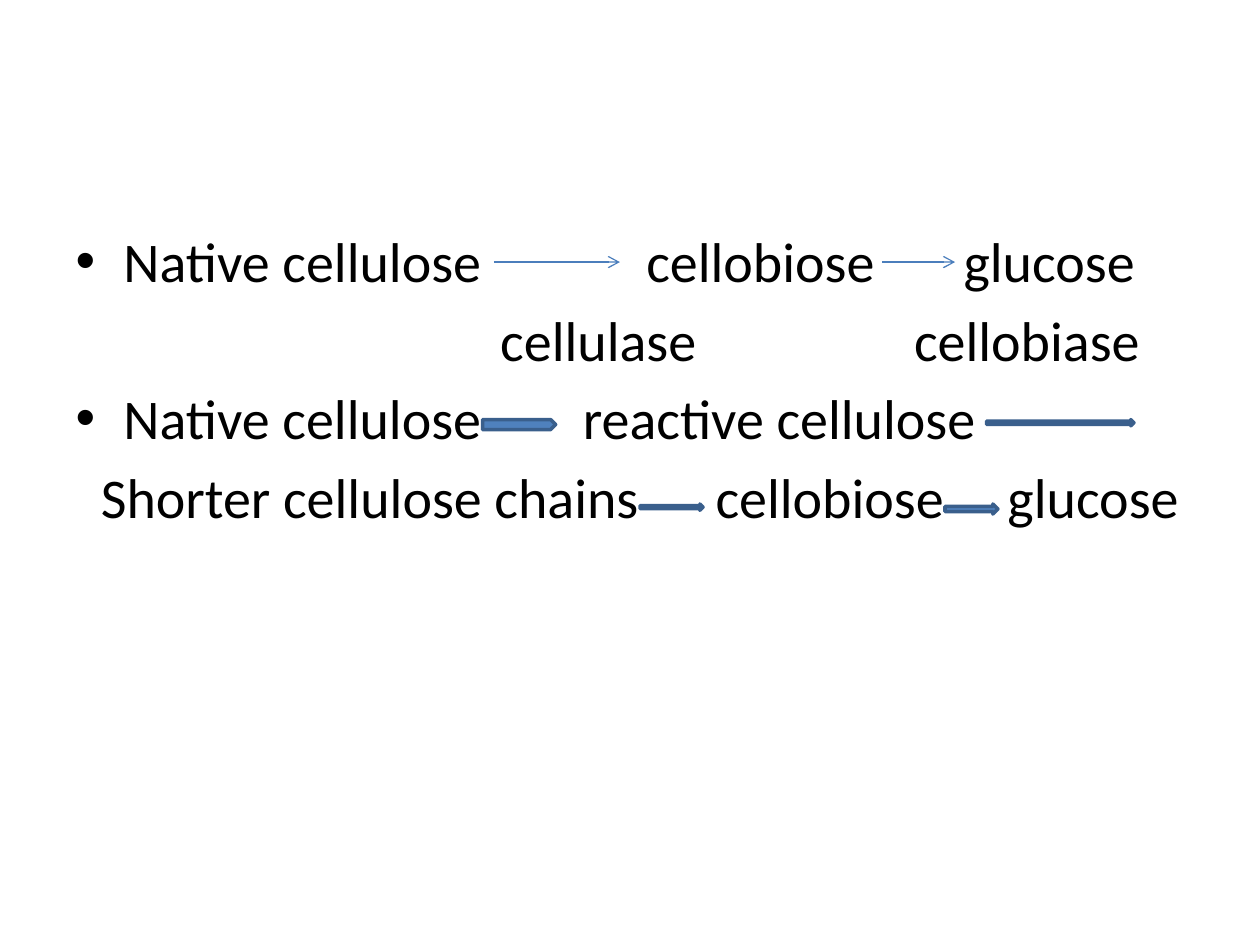
from dataclasses import dataclass

from lxml import etree
from pptx import Presentation, util as u
from pptx.dml.color import RGBColor
from pptx.enum import shapes
from pptx.oxml.ns import qn


@dataclass(frozen=True)
class Theme:
    font: str = "Calibri"
    size: int = 32
    ink: RGBColor = RGBColor(0x00, 0x00, 0x00)
    fill: RGBColor = RGBColor(0x4F, 0x81, 0xBD)
    outline: RGBColor = RGBColor(0x3A, 0x5F, 0x8C)
    thin_line: RGBColor = RGBColor(0x4B, 0x7E, 0xBC)


@dataclass(frozen=True)
class Step:
    """One line of terms; each gap is the points added to the space between two."""
    terms: tuple[str, ...]
    gaps: tuple[float, ...]
    margin: float = 0.38
    bullet: bool = False


@dataclass(frozen=True)
class ThinArrow:
    left: float
    right: float


@dataclass(frozen=True)
class BlockArrow:
    left: float
    top: float
    width: float
    height: float
    shaft: float = 0.5


THEME = Theme()
THIN_ARROW_TOP = 2.08

STEPS = (
    Step(("Native cellulose", "cellobiose", "glucose"), (86.8, 43.4), bullet=True),
    Step(("cellulase", "cellobiase"), (117,), margin=3.37),
    Step(("Native cellulose", "reactive cellulose"), (50.6,), bullet=True),
    Step(("Shorter cellulose chains", "cellobiose", "glucose"), (36.2, 28.9), margin=0.2),
)
THIN_ARROWS = (ThinArrow(3.92, 4.92), ThinArrow(7, 7.58))
BLOCK_ARROWS = (
    BlockArrow(3.83, 3.33, 0.58, 0.08, shaft=1),
    BlockArrow(7.83, 3.33, 1.17, 0.05),
    BlockArrow(5.08, 4, 0.5, 0.05),
    BlockArrow(7.5, 4, 0.42, 0.08),
)


def write_step(paragraph, step: Step) -> None:
    properties = paragraph._p.get_or_add_pPr()
    margin = u.Inches(step.margin)
    properties.set("marL", str(margin))
    properties.set("indent", str(-margin if step.bullet else 0))
    if step.bullet:
        etree.SubElement(properties, qn("a:buChar")).set("char", "•")
    else:
        etree.SubElement(properties, qn("a:buNone"))
    paragraph.font.name = THEME.font
    paragraph.font.size = u.Pt(THEME.size)
    paragraph.font.color.rgb = THEME.ink

    # A widened space leaves room for the arrow before each later term
    paragraph.add_run().text = step.terms[0]
    for gap, term in zip(step.gaps, step.terms[1:]):
        space = paragraph.add_run()
        space.text = " "
        space._r.get_or_add_rPr().set("spc", str(round(gap * 100)))
        paragraph.add_run().text = term


def draw_thin_arrow(slide, arrow: ThinArrow) -> None:
    reaction = slide.shapes.add_connector(
        shapes.MSO_CONNECTOR.STRAIGHT,
        u.Inches(arrow.left), u.Inches(THIN_ARROW_TOP),
        u.Inches(arrow.right), u.Inches(THIN_ARROW_TOP))
    reaction.line.color.rgb = THEME.thin_line
    reaction.line.width = u.Pt(0.75)
    head = etree.SubElement(reaction.line._get_or_add_ln(), qn("a:tailEnd"))
    head.set("type", "arrow")
    etree.SubElement(reaction._element.spPr, qn("a:effectLst"))


def draw_block_arrow(slide, arrow: BlockArrow) -> None:
    reaction = slide.shapes.add_shape(
        shapes.MSO_SHAPE.RIGHT_ARROW,
        u.Inches(arrow.left), u.Inches(arrow.top),
        u.Inches(arrow.width), u.Inches(arrow.height))
    reaction.adjustments[0] = arrow.shaft
    reaction.shadow.inherit = False
    reaction.fill.solid()
    reaction.fill.fore_color.rgb = THEME.fill
    reaction.line.color.rgb = THEME.outline
    reaction.line.width = u.Pt(2)


def main() -> None:
    deck = Presentation()
    deck.slide_width, deck.slide_height = u.Inches(10), u.Inches(7.5)
    slide = deck.slides.add_slide(deck.slide_layouts.get_by_name("Title and Content"))

    # The slide has no title
    heading = slide.shapes.title._element
    heading.getparent().remove(heading)

    # Reaction steps
    pathway = slide.placeholders[1]
    pathway.left, pathway.top = u.Inches(0.5), u.Inches(1.75)
    pathway.width, pathway.height = u.Inches(9), u.Inches(4.95)
    frame = pathway.text_frame
    for number, step in enumerate(STEPS):
        write_step(frame.add_paragraph() if number else frame.paragraphs[0], step)

    # Arrows between the terms
    for arrow in THIN_ARROWS:
        draw_thin_arrow(slide, arrow)
    for arrow in BLOCK_ARROWS:
        draw_block_arrow(slide, arrow)

    deck.save("out.pptx")


if __name__ == "__main__":
    main()
